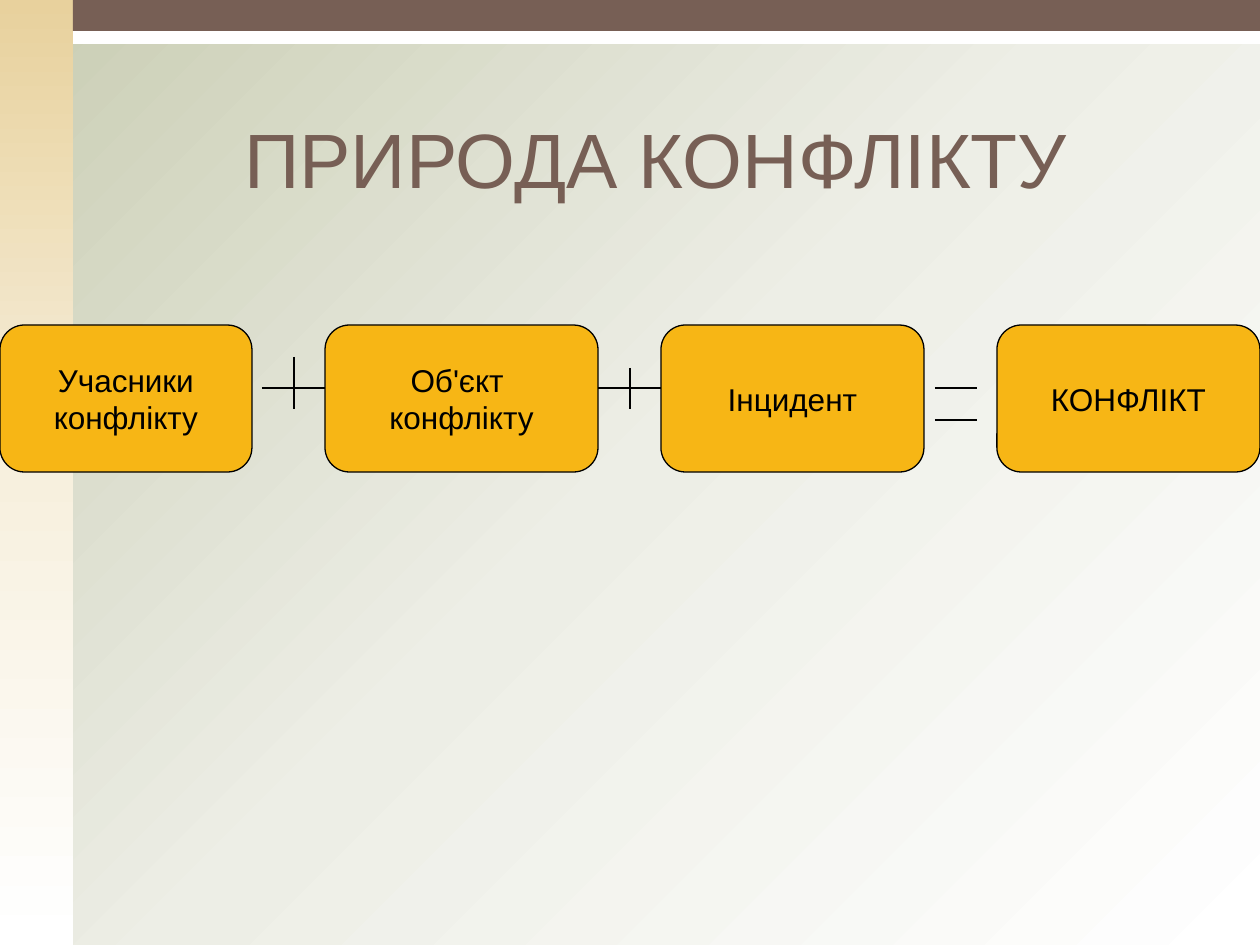
from copy import deepcopy

from lxml import etree
from pptx import Presentation
from pptx.dml.color import RGBColor
from pptx.enum.shapes import MSO_CONNECTOR, MSO_SHAPE
from pptx.enum.text import MSO_ANCHOR, PP_ALIGN
from pptx.oxml.ns import qn
from pptx.util import Pt

RECTANGLE = MSO_SHAPE.RECTANGLE
ROUNDED = MSO_SHAPE.ROUNDED_RECTANGLE
STRAIGHT = MSO_CONNECTOR.STRAIGHT
CENTER = PP_ALIGN.CENTER
MIDDLE = MSO_ANCHOR.MIDDLE
BOTTOM = MSO_ANCHOR.BOTTOM

BLACK = RGBColor(0x00, 0x00, 0x00)
WHITE = RGBColor(0xFF, 0xFF, 0xFF)
BROWN = RGBColor(0x77, 0x5F, 0x55)
AMBER = RGBColor(0xF7, 0xB6, 0x15)
SAGE_FADE = (RGBColor(0xC9, 0xCD, 0xB3), RGBColor(0xED, 0xEE, 0xE6), WHITE)
SAND_FADE = (RGBColor(0xE8, 0xD1, 0x9D), RGBColor(0xF7, 0xF0, 0xDE), WHITE)

FONT = "Arial"
TITLE = "ПРИРОДА КОНФЛІКТУ"
TERMS = [
    (0, 252, ["Учасники", "конфлікту"]),
    (325, 273, ["Об'єкт ", "конфлікту"]),
    (661, 263, ["Інцидент"]),
    (997, 263, ["КОНФЛІКТ"]),
]
TERM_TOP, TERM_HEIGHT = 325, 147
SIGN_Y = 388
PLUSES = [(294, 357), (630, 368)]
PLUS_REACH, PLUS_BOTTOM = 32, 409
EQUALS_LEFT, EQUALS_RIGHT, EQUALS_GAP = 935, 977, 32

SLIDE_WIDTH, SLIDE_HEIGHT = 1260, 945
SIDEBAR_WIDTH = 73
EMU_PER_PX = 914400 / 126


def px(*lengths):
    return [round(length * EMU_PER_PX) for length in lengths]


def fade(fill, owner, colors, angle):
    fill.gradient()
    fill.gradient_angle = 360 - angle
    stop_list = owner.find(".//" + qn("a:gsLst"))
    stop_list.append(deepcopy(stop_list[-1]))
    for index, (stop, color) in enumerate(zip(fill.gradient_stops, colors)):
        stop.position = index / (len(colors) - 1)
        stop.color.rgb = color


def add_box(slide, preset, bounds, color=None):
    box = slide.shapes.add_shape(preset, *px(*bounds))
    box.shadow.inherit = False
    box.line.fill.background()
    if color is not None:
        box.fill.solid()
        box.fill.fore_color.rgb = color
    return box


def write_lines(frame, lines, size, color, anchor):
    frame.vertical_anchor = anchor
    for index, line in enumerate(lines):
        paragraph = frame.add_paragraph() if index else frame.paragraphs[0]
        paragraph.alignment = CENTER
        run = paragraph.add_run()
        run.text = line
        run.font.name = FONT
        run.font.size = Pt(size)
        run.font.color.rgb = color


def outline(line):
    line.color.rgb = BLACK
    line.width = Pt(0.75)


def add_stroke(slide, *ends):
    stroke = slide.shapes.add_connector(STRAIGHT, *px(*ends))
    outline(stroke.line)
    etree.SubElement(stroke.element.spPr, qn("a:effectLst"))


def main():
    deck = Presentation()
    deck.slide_width, deck.slide_height = px(SLIDE_WIDTH, SLIDE_HEIGHT)
    slide = deck.slides.add_slide(deck.slide_layouts[5])
    fade(slide.background.fill, slide.element, SAGE_FADE, 45)

    add_box(slide, RECTANGLE, (0, 0, SLIDE_WIDTH, 44), WHITE)
    sidebar = add_box(slide, RECTANGLE, (0, 0, SIDEBAR_WIDTH, SLIDE_HEIGHT))
    fade(sidebar.fill, sidebar.element, SAND_FADE, 90)
    add_box(slide, RECTANGLE, (SIDEBAR_WIDTH, 0, SLIDE_WIDTH - SIDEBAR_WIDTH, 31), BROWN)

    title = slide.shapes.title
    title.left, title.top, title.width, title.height = px(105, 53, 1102, 157)
    write_lines(title.text_frame, [TITLE], 44, BROWN, BOTTOM)

    for left, width, lines in TERMS:
        term = add_box(slide, ROUNDED, (left, TERM_TOP, width, TERM_HEIGHT), AMBER)
        outline(term.line)
        term.text_frame.word_wrap = False
        write_lines(term.text_frame, lines, 18, BLACK, MIDDLE)

    for x, top in PLUSES:
        add_stroke(slide, x - PLUS_REACH, SIGN_Y, x + PLUS_REACH - 1, SIGN_Y)
        add_stroke(slide, x, top, x, PLUS_BOTTOM)
    for y in (SIGN_Y, SIGN_Y + EQUALS_GAP):
        add_stroke(slide, EQUALS_LEFT, y, EQUALS_RIGHT, y)

    deck.save("out.pptx")


if __name__ == "__main__":
    main()
